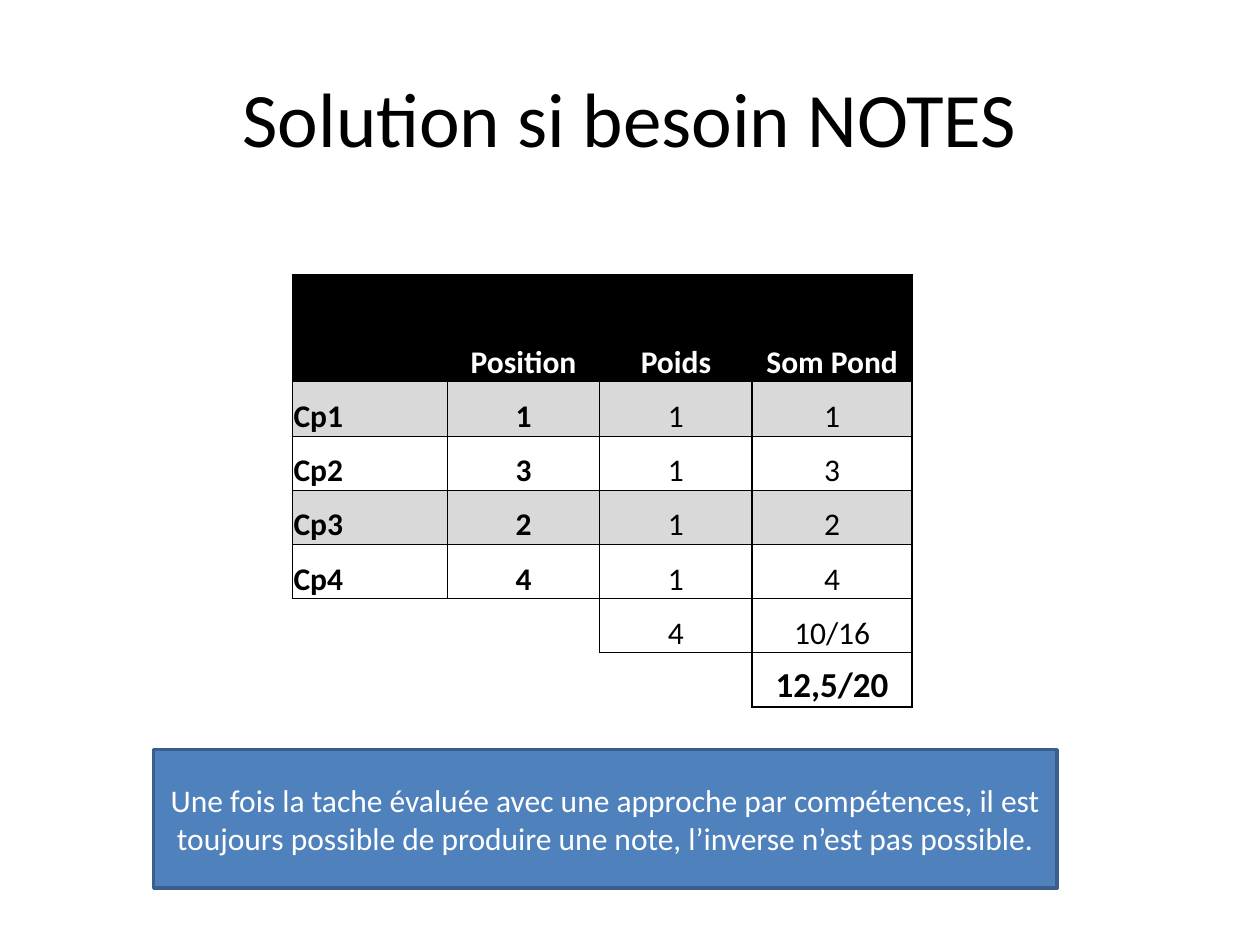
"""Builds the slide that turns weighted skill levels into a mark."""
import dataclasses

import lxml.etree
import pptx
import pptx.dml.color
import pptx.enum.shapes
import pptx.enum.text
import pptx.oxml.ns
import pptx.util

Inches = pptx.util.Inches
Pt = pptx.util.Pt
PP_ALIGN = pptx.enum.text.PP_ALIGN
ANCHOR = pptx.enum.text.MSO_ANCHOR
qn = pptx.oxml.ns.qn


@dataclasses.dataclass(frozen=True)
class Theme:
    font: str = "Calibri"
    black: str = "000000"
    white: str = "FFFFFF"
    band: str = "D9D9D9"
    blue: str = "4F81BD"
    blue_edge: str = "3A5F8C"
    title: int = 44
    body: int = 18
    result: int = 20
    thin: float = 0.5
    thick: float = 1
    plain_table: str = "{2D5ABB26-0587-4C30-8999-92F81FD0307C}"


def rgb(color):
    return pptx.dml.color.RGBColor.from_string(color)


class SlideBuilder:
    def __init__(self, slide, theme):
        self.slide = slide
        self.theme = theme

    def set_text(self, tf, text, size, color, bold=False, align=PP_ALIGN.CENTER):
        p = tf.paragraphs[0]
        p.text = text
        p.alignment = align
        p.font.name = self.theme.font
        p.font.size = Pt(size)
        p.font.bold = bold
        p.font.color.rgb = rgb(color)

    def title(self, text, left, top, width, height):
        sp = self.slide.shapes.add_textbox(Inches(left), Inches(top), Inches(width), Inches(height))
        tf = sp.text_frame
        tf.word_wrap = True
        tf.vertical_anchor = ANCHOR.MIDDLE
        self.set_text(tf, text, self.theme.title, self.theme.black)

    def message(self, text, left, top, width, height):
        sp = self.slide.shapes.add_shape(
            pptx.enum.shapes.MSO_SHAPE.RECTANGLE,
            Inches(left), Inches(top), Inches(width), Inches(height))
        sp.shadow.inherit = False
        sp.fill.solid()
        sp.fill.fore_color.rgb = rgb(self.theme.blue)
        sp.line.color.rgb = rgb(self.theme.blue_edge)
        sp.line.width = Pt(2)
        tf = sp.text_frame
        tf.word_wrap = True
        tf.vertical_anchor = ANCHOR.MIDDLE
        self.set_text(tf, text, self.theme.body, self.theme.white)

    def borders(self, cell, widths):
        tc_pr = cell._tc.get_or_add_tcPr()
        for side, width in zip("LRTB", widths):
            ln = lxml.etree.SubElement(tc_pr, qn(f"a:ln{side}"), w=str(Pt(width)))
            fill = lxml.etree.SubElement(ln, qn("a:solidFill"))
            lxml.etree.SubElement(fill, qn("a:srgbClr"), val=self.theme.black)

    def score_cell(self, cell, text, row, col, skills):
        t = self.theme
        header, skill, total = row == 0, 0 < row <= skills, row > skills
        if total and not text:
            return
        left, right = (t.thick if total or col != 2 else t.thin,
                       t.thick if total or col != 1 else t.thin)
        top = t.thick if header or total else t.thin
        bottom = t.thick if row >= skills else t.thin
        self.borders(cell, (left, right, top, bottom))
        if header or skill and row % 2:
            cell.fill.solid()
            cell.fill.fore_color.rgb = rgb(t.black if header else t.band)
        cell.vertical_anchor = ANCHOR.BOTTOM
        cell.margin_left = cell.margin_right = cell.margin_top = Inches(0.01)
        cell.margin_bottom = 0
        result = row == skills + 2
        self.set_text(cell.text_frame, text,
                      t.result if result else t.body,
                      t.white if header else t.black,
                      bold=header or result or skill and col < 2,
                      align=PP_ALIGN.LEFT if skill and col == 0 else PP_ALIGN.CENTER)

    def score_table(self, rows, skills, left, top, col_widths, row_heights):
        frame = self.slide.shapes.add_table(
            len(rows), len(col_widths), Inches(left), Inches(top),
            Inches(sum(col_widths)), Inches(sum(row_heights)))
        table = frame.table
        table.first_row = table.horz_banding = False
        table._tbl.tblPr.find(qn("a:tableStyleId")).text = self.theme.plain_table
        for column, width in zip(table.columns, col_widths):
            column.width = Inches(width)
        for row, height in zip(table.rows, row_heights):
            row.height = Inches(height)
        for r, texts in enumerate(rows):
            for c, text in enumerate(texts):
                self.score_cell(table.cell(r, c), text, r, c, skills)


def main():
    prs = pptx.Presentation()
    prs.slide_width, prs.slide_height = Inches(10), Inches(7.5)
    s = SlideBuilder(prs.slides.add_slide(prs.slide_layouts[6]), Theme())

    positions = ["1", "3", "2", "4"]
    skills = len(positions)
    rows = [
        ["", "Position", "Poids", "Som Pond"],
        *([f"Cp{i}", position, "1", position] for i, position in enumerate(positions, 1)),
        ["", "", "4", "10/16"],
        ["", "", "", "12,5/20"],
    ]
    s.title("Solution si besoin NOTES", 0.5, 0.3, 9, 1.25)
    s.score_table(rows, skills, 2.32, 2.18, [1.23, 1.21, 1.21, 1.27],
                  [0.85] + [0.43] * (len(rows) - 1))
    s.message("Une fois la tache évaluée avec une approche par compétences, il est "
              "toujours possible de produire une note, l’inverse n’est pas possible.",
              1.22, 5.95, 7.17, 1.1)
    prs.save("out.pptx")


if __name__ == "__main__":
    main()
